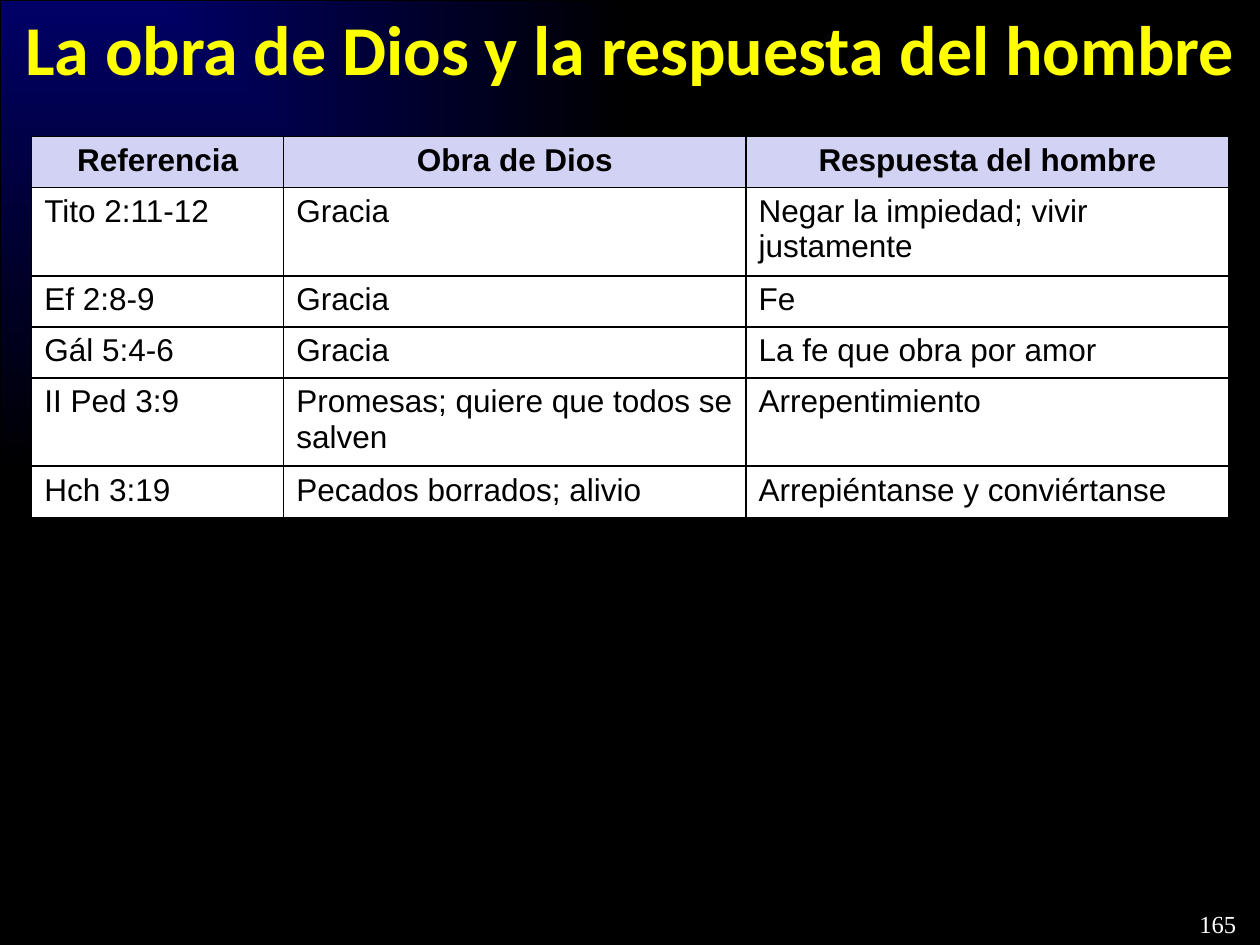
"""Builds a slide with a table of God's work and man's response."""
from lxml.etree import SubElement
from pptx import Presentation
from pptx.dml.color import RGBColor
from pptx.enum.shapes import MSO_SHAPE as SHAPE
from pptx.enum.text import MSO_ANCHOR as ANCHOR, PP_ALIGN as ALIGN
from pptx.oxml.ns import qn
from pptx.util import Cm, Pt

COLORS = {
    "navy": "000066",
    "black": "000000",
    "white": "FFFFFF",
    "yellow": "FFFF00",
    "lavender": "D2D2F4",
}
FORMATS = {
    "title": {"name": "Calibri", "size": Pt(40), "bold": True, "color": "yellow"},
    "number": {"name": "Times New Roman", "size": Pt(14), "bold": False, "color": "white"},
    "header": {"name": "Arial", "size": Pt(18), "bold": True, "color": "black"},
    "body": {"name": "Arial", "size": Pt(18), "bold": False, "color": "black"},
}
WIDTH, HEIGHT = 25.4, 19.05
COLUMNS = [5.08, 9.32, 9.73]
ROW_HEIGHT = 1.03
ROWS = [
    ("Referencia", "Obra de Dios", "Respuesta del hombre"),
    ("Tito 2:11-12", "Gracia", "Negar la impiedad; vivir justamente"),
    ("Ef 2:8-9", "Gracia", "Fe"),
    ("Gál 5:4-6", "Gracia", "La fe que obra por amor"),
    ("II Ped 3:9", "Promesas; quiere que todos se salven", "Arrepentimiento"),
    ("Hch 3:19", "Pecados borrados; alivio", "Arrepiéntanse y conviértanse"),
]


def rgb(name):
    return RGBColor.from_string(COLORS[name])


class Deck:
    def __init__(self):
        self.prs = Presentation()
        self.prs.slide_width, self.prs.slide_height = Cm(WIDTH), Cm(HEIGHT)
        self.s = self.prs.slides.add_slide(self.prs.slide_layouts[5])

    def add_run(self, tf, text, style, align=ALIGN.LEFT):
        p = tf.paragraphs[0]
        p.alignment = align
        r = p.add_run()
        r.text = text
        for key, value in FORMATS[style].items():
            if key == "color":
                r.font.color.rgb = rgb(value)
            else:
                setattr(r.font, key, value)

    def backdrop(self, start, end):
        sp = self.s.shapes.add_shape(SHAPE.RECTANGLE, 0, 0, Cm(WIDTH), Cm(HEIGHT))
        sp.shadow.inherit = False
        sp.line.color.rgb, sp.line.width = rgb(end), Pt(0.75)
        sp.fill.gradient()
        for stop, name in zip(sp.fill.gradient_stops, (start, end)):
            stop.color.rgb = rgb(name)
        grad = sp._element.spPr.find(qn("a:gradFill"))
        grad.remove(grad.find(qn("a:lin")))
        corner = SubElement(grad, qn("a:path"), {"path": "rect"})
        SubElement(corner, qn("a:fillToRect"), {"r": "100000", "b": "100000"})
        self.s.shapes._spTree.insert(2, sp._element)

    def title(self, text, height):
        sp = self.s.shapes.title
        sp.left, sp.top, sp.width, sp.height = 0, 0, Cm(WIDTH), Cm(height)
        tf = sp.text_frame
        tf.vertical_anchor = ANCHOR.MIDDLE
        self.add_run(tf, text, "title", ALIGN.CENTER)

    def text(self, text, style, *box):
        tf = self.s.shapes.add_textbox(*map(Cm, box)).text_frame
        tf.word_wrap = True
        self.add_run(tf, text, style)

    def borders(self, cell, color, width):
        tc_pr = cell._tc.get_or_add_tcPr()
        for side in ("lnL", "lnR", "lnT", "lnB"):
            ln = SubElement(tc_pr, qn(f"a:{side}"), {"w": str(Pt(width))})
            fill = SubElement(ln, qn("a:solidFill"))
            SubElement(fill, qn("a:srgbClr"), {"val": COLORS[color]})

    def table(self, rows, widths, left, top):
        box = (left, top, sum(widths), ROW_HEIGHT * len(rows))
        table = self.s.shapes.add_table(len(rows), len(widths), *map(Cm, box)).table
        for column, width in zip(table.columns, widths):
            column.width = Cm(width)
        for i, row in enumerate(rows):
            style, fill, align = (
                ("body", "white", ALIGN.LEFT) if i else ("header", "lavender", ALIGN.CENTER)
            )
            for j, text in enumerate(row):
                cell = table.cell(i, j)
                self.borders(cell, "black", 1)
                cell.fill.solid()
                cell.fill.fore_color.rgb = rgb(fill)
                self.add_run(cell.text_frame, text, style, align)


def main():
    deck = Deck()
    deck.backdrop("navy", "black")
    deck.title("La obra de Dios y la respuesta del hombre", 1.9)
    deck.text("165", "number", 23.93, 18.2, 1.47, 0.85)
    deck.table(ROWS, COLUMNS, 0.64, 2.75)
    deck.prs.save("out.pptx")


if __name__ == "__main__":
    main()
